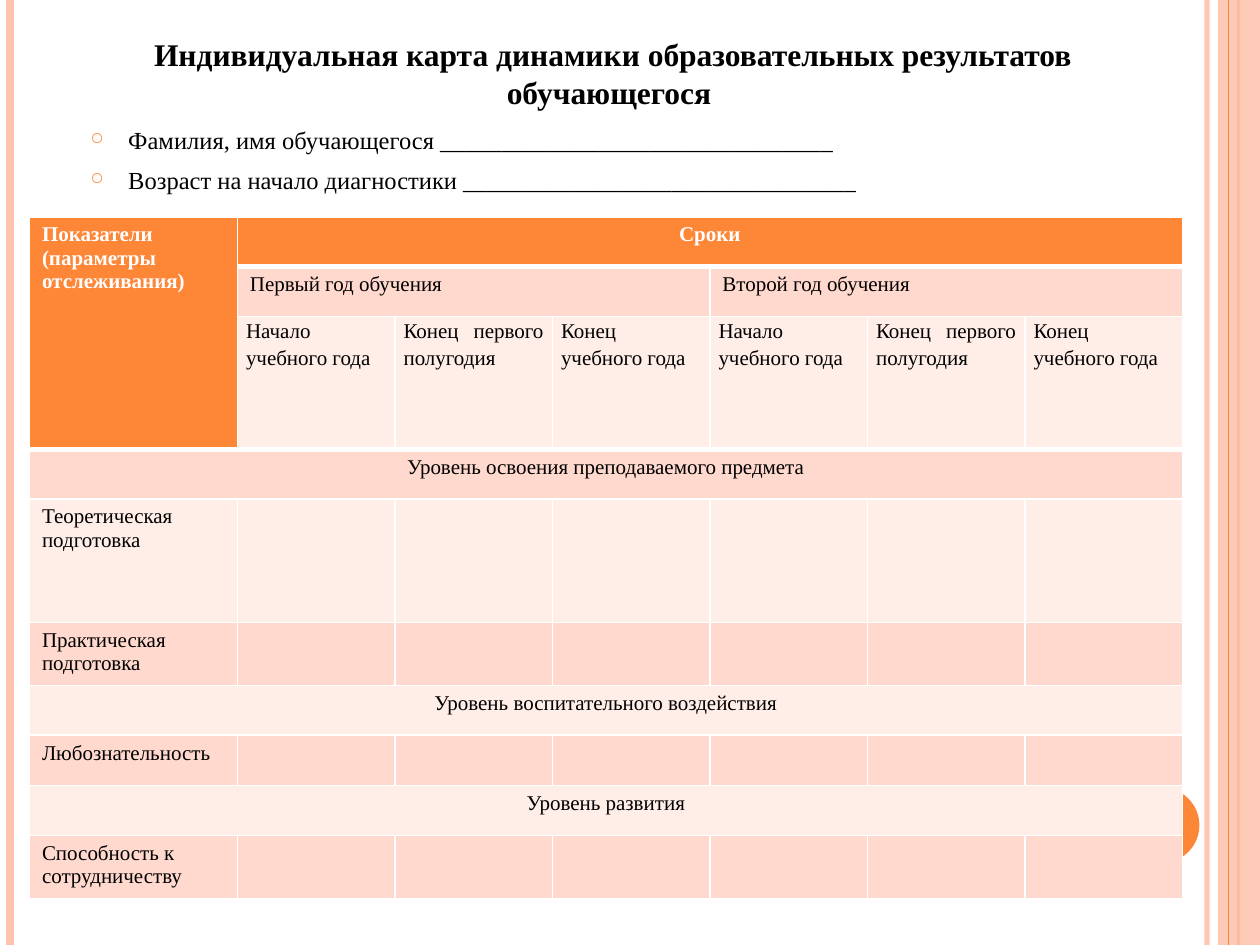
"""Build the slide with a learner's individual progress card."""
from dataclasses import dataclass
from typing import Optional

import lxml.etree
import pptx
import pptx.dml.color
import pptx.enum.shapes
import pptx.enum.text
import pptx.oxml
import pptx.oxml.ns
import pptx.util

Pt = pptx.util.Pt
qn = pptx.oxml.ns.qn
Align = pptx.enum.text.PP_ALIGN

FONT = "Times New Roman"
ORANGE, PEACH = "FE8637", "FEC3AE"
DARK_BAND, LIGHT_BAND = "FFD9CE", "FFEDE8"
WHITE, BLACK = "FFFFFF", "000000"
SLIDE_HEIGHT = 540
COLUMN_WIDTHS = [118.8] + [90] * 6
ROW_HEIGHTS = [28.4, 28.4, 76, 28.4, 70.6, 36, 28.4, 28.4, 28.4, 36]
THICK_RULE_ROWS = (0, 2)


@dataclass
class Stripe:
    x: float
    width: float
    color: str
    opacity: int = 100


@dataclass
class Entry:
    row: int
    column: int
    text: str
    rows: int = 1
    columns: int = 1
    align: Align = Align.LEFT
    header: bool = False
    period: bool = False


STRIPES = [
    Stripe(689.8, 3, PEACH, 93),
    Stripe(5.8, 4.5, PEACH),
    Stripe(707.8, 1.5, ORANGE),
]
INNER_STRIPE = Stripe(702, 0.75, ORANGE)
BODY_LABELS = ["Фамилия, имя обучающегося ", "Возраст на начало диагностики "]
YEARS = ["Первый год обучения", "Второй год обучения"]
PERIODS = ["Начало учебного года", "Конец первого полугодия", "Конец учебного года"]
SECTIONS = {
    3: "Уровень освоения преподаваемого предмета",
    6: "Уровень воспитательного воздействия",
    8: "Уровень развития",
}
INDICATORS = {
    4: "Теоретическая подготовка",
    5: "Практическая подготовка",
    7: "Любознательность",
    9: "Способность к сотрудничеству",
}


def rgb(color: str) -> pptx.dml.color.RGBColor:
    """Turn a hex string into a colour."""
    return pptx.dml.color.RGBColor.from_string(color)


def set_opacity(properties, percent: int) -> None:
    """Set the opacity of the first solid colour found in the properties."""
    color = next(properties.iter(qn("a:srgbClr")))
    lxml.etree.SubElement(color, qn("a:alpha"), val=str(percent * 1000))


def set_font(paragraph, size: float, color: str, bold: bool = False) -> None:
    """Format the font of a whole paragraph."""
    paragraph.font.name = FONT
    paragraph.font.size = Pt(size)
    paragraph.font.bold = bold
    paragraph.font.color.rgb = rgb(color)


def draw_stripe(slide, stripe: Stripe) -> None:
    """Draw a vertical line over the full slide height."""
    line = slide.shapes.add_connector(
        pptx.enum.shapes.MSO_CONNECTOR.STRAIGHT,
        Pt(stripe.x), Pt(0), Pt(stripe.x), Pt(SLIDE_HEIGHT))
    line.line.width = Pt(stripe.width)
    line.line.color.rgb = rgb(stripe.color)
    properties = line._element.spPr
    if stripe.opacity < 100:
        set_opacity(properties, stripe.opacity)
    lxml.etree.SubElement(properties, qn("a:effectLst"))


def draw_shape(slide, kind, left: float, top: float, width: float, height: float,
               color: str, opacity: Optional[int] = None) -> None:
    """Draw a filled shape without an outline."""
    shape = slide.shapes.add_shape(kind, Pt(left), Pt(top), Pt(width), Pt(height))
    shape.fill.solid()
    shape.fill.fore_color.rgb = rgb(color)
    shape.line.fill.background()
    shape.shadow.inherit = False
    if opacity is not None:
        set_opacity(shape._element.spPr, opacity)


def draw_decoration(slide) -> None:
    """Draw the stripes, the right band and the circle."""
    shapes = pptx.enum.shapes.MSO_SHAPE
    for stripe in STRIPES:
        draw_stripe(slide, stripe)
    draw_shape(slide, shapes.RECTANGLE, 696, 0, 24, SLIDE_HEIGHT, PEACH, 87)
    draw_stripe(slide, INNER_STRIPE)
    draw_shape(slide, shapes.OVAL, 642.2, 450, 43.2, 43.2, ORANGE)


def fill_title(slide) -> None:
    """Place and format the title."""
    title = slide.shapes.title
    title.left, title.top, title.width, title.height = Pt(56), Pt(16.6), Pt(588.5), Pt(51)
    title.text_frame.text = "Индивидуальная карта динамики образовательных результатов обучающегося "
    title.text_frame.vertical_anchor = pptx.enum.text.MSO_ANCHOR.TOP
    paragraph = title.text_frame.paragraphs[0]
    paragraph.alignment = Align.CENTER
    set_font(paragraph, 18, BLACK, True)


def draw_body(slide) -> None:
    """Draw the bulleted lines to be filled in."""
    frame = slide.shapes.add_textbox(Pt(44.6), Pt(67.7), Pt(588), Pt(400)).text_frame
    frame.word_wrap = True
    for index, label in enumerate(BODY_LABELS):
        paragraph = frame.add_paragraph() if index else frame.paragraphs[0]
        paragraph.text = label + "_" * 32
        paragraph.space_before = Pt(6)
        set_font(paragraph, 14, BLACK)
        properties = paragraph._p.get_or_add_pPr()
        properties.set("marL", str(Pt(21.6)))
        properties.set("indent", str(Pt(-21.6)))
        bullet_color = lxml.etree.Element(qn("a:buClr"))
        lxml.etree.SubElement(bullet_color, qn("a:srgbClr"), val=ORANGE)
        bullet_size = lxml.etree.Element(qn("a:buSzPct"), val="70000")
        bullet = lxml.etree.Element(qn("a:buChar"), char="○")
        position = properties.index(properties.find(qn("a:defRPr")))
        properties[position:position] = [bullet_color, bullet_size, bullet]


def style_cell(cell, color: str, top: float, bottom: float) -> None:
    """Fill a cell and give it white borders."""
    cell.fill.solid()
    cell.fill.fore_color.rgb = rgb(color)
    properties = cell._tc.get_or_add_tcPr()
    widths = {"a:lnL": 1, "a:lnR": 1, "a:lnT": top, "a:lnB": bottom}
    for index, (tag, width) in enumerate(widths.items()):
        border = lxml.etree.Element(qn(tag), w=str(Pt(width)))
        fill = lxml.etree.SubElement(border, qn("a:solidFill"))
        lxml.etree.SubElement(fill, qn("a:srgbClr"), val=WHITE)
        properties.insert(index, border)


def write_entry(table, entry: Entry) -> None:
    """Merge the cells of an entry and write its text."""
    cell = table.cell(entry.row, entry.column)
    if entry.rows * entry.columns > 1:
        cell.merge(table.cell(entry.row + entry.rows - 1, entry.column + entry.columns - 1))
    cell.text = entry.text
    paragraph = cell.text_frame.paragraphs[0]
    paragraph.alignment = entry.align
    set_font(paragraph, 12, WHITE if entry.header else BLACK, entry.header)
    if entry.period:
        paragraph.line_spacing = 1.15
        cell.margin_left = cell.margin_right = Pt(5)
        cell.margin_top = cell.margin_bottom = Pt(0)


def table_entries() -> list[Entry]:
    """List every text of the table with its place."""
    entries = [Entry(0, 0, "Показатели (параметры отслеживания)", rows=3, header=True),
               Entry(0, 1, "Сроки", columns=6, align=Align.CENTER, header=True)]
    for index, year in enumerate(YEARS):
        first = 1 + index * len(PERIODS)
        entries.append(Entry(1, first, year, columns=len(PERIODS)))
        entries += [Entry(2, first + offset, period, align=Align.JUSTIFY, period=True)
                    for offset, period in enumerate(PERIODS)]
    entries += [Entry(row, 0, text, columns=7, align=Align.CENTER) for row, text in SECTIONS.items()]
    entries += [Entry(row, 0, text) for row, text in INDICATORS.items()]
    return entries


def draw_table(slide) -> None:
    """Draw the table of indicators and periods."""
    table = slide.shapes.add_table(
        len(ROW_HEIGHTS), len(COLUMN_WIDTHS), Pt(16.8), Pt(124),
        Pt(sum(COLUMN_WIDTHS)), Pt(sum(ROW_HEIGHTS))).table
    for column, width in zip(table.columns, COLUMN_WIDTHS):
        column.width = Pt(width)
    for row_index, height in enumerate(ROW_HEIGHTS):
        table.rows[row_index].height = Pt(height)
        band = DARK_BAND if row_index % 2 else LIGHT_BAND
        top = 3 if row_index - 1 in THICK_RULE_ROWS else 1
        bottom = 3 if row_index in THICK_RULE_ROWS else 1
        for column_index in range(len(COLUMN_WIDTHS)):
            header = row_index == 0 or (column_index == 0 and row_index < 3)
            style_cell(table.cell(row_index, column_index), ORANGE if header else band, top, bottom)
    for entry in table_entries():
        write_entry(table, entry)


def main() -> None:
    """Build and save the presentation."""
    presentation = pptx.Presentation()
    presentation.slide_width, presentation.slide_height = Pt(720), Pt(SLIDE_HEIGHT)
    slide = presentation.slides.add_slide(presentation.slide_layouts[5])
    draw_decoration(slide)
    draw_body(slide)
    fill_title(slide)
    draw_table(slide)
    presentation.save("out.pptx")


if __name__ == "__main__":
    main()
